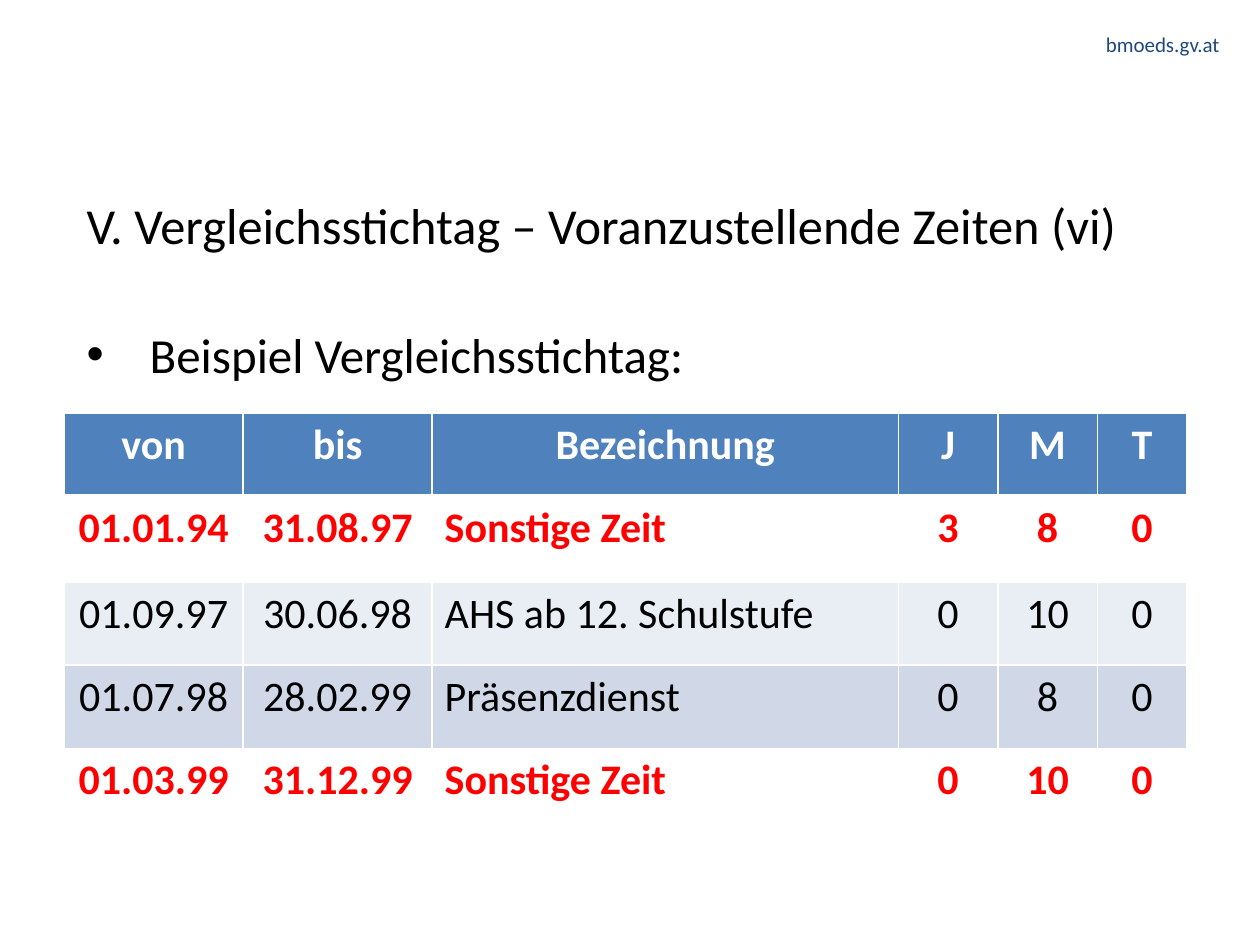
"""Build the slide with the example table for the reference date."""
from dataclasses import dataclass
from typing import Optional

from lxml import etree
from pptx import Presentation
from pptx import util as u
from pptx.dml.color import RGBColor
from pptx.enum import text as t
from pptx.oxml.ns import qn


@dataclass(frozen=True)
class Theme:
    font: str = "Calibri"
    black: str = "000000"
    white: str = "FFFFFF"
    red: str = "FF0000"
    navy: str = "1F497D"
    blue: str = "4F81BD"
    pale: str = "E9EDF4"
    mist: str = "D0D8E8"
    site: float = 12
    title: float = 28.8
    body: float = 28
    cell: float = 24
    lead: float = 42


@dataclass(frozen=True)
class Label:
    words: str
    box: tuple[float, float, float, float]
    size: float
    color: str
    align: t.PP_ALIGN = t.PP_ALIGN.LEFT
    inset: Optional[float] = None
    lead: Optional[float] = None
    hang: float = 0
    mark: str = ""


@dataclass(frozen=True)
class Row:
    cells: tuple[str, ...]
    high: float
    color: str
    bold: bool
    fill: Optional[str] = None
    base: float = 1


LOOK = Theme()
LEFT, CENTER = t.PP_ALIGN.LEFT, t.PP_ALIGN.CENTER
LABELS = (
    Label("bmoeds.gv.at", (7.27, 0.25, 2.41, 0.2), LOOK.site, LOOK.navy,
          align=t.PP_ALIGN.RIGHT, inset=0),
    Label("V. Vergleichsstichtag – Voranzustellende Zeiten (vi)",
          (0.59, 1.39, 8.73, 1.15), LOOK.title, LOOK.black,
          lead=LOOK.lead, hang=0.56),
    Label("Beispiel Vergleichsstichtag:", (0.59, 2.41, 9.13, 4.65),
          LOOK.body, LOOK.black, lead=LOOK.lead, hang=0.5, mark="•"),
)
SPOT = (0.51, 3.28)
COLS = (1.42, 1.5, 3.7, 0.79, 0.79, 0.71)
NAME = 2
ROWS = (
    Row(("von", "bis", "Bezeichnung", "J", "M", "T"),
        0.66, LOOK.white, True, LOOK.blue, base=3),
    Row(("01.01.94", "31.08.97", "Sonstige Zeit", "3", "8", "0"),
        0.68, LOOK.red, True),
    Row(("01.09.97", "30.06.98", "AHS ab 12. Schulstufe", "0", "10", "0"),
        0.66, LOOK.black, False, LOOK.pale),
    Row(("01.07.98", "28.02.99", "Präsenzdienst", "0", "8", "0"),
        0.66, LOOK.black, False, LOOK.mist),
    Row(("01.03.99", "31.12.99", "Sonstige Zeit", "0", "10", "0"),
        0.66, LOOK.red, True),
)


def write(para, words: str, size: float, color: str, bold: bool = False) -> None:
    run = para.add_run()
    run.text = words
    run.font.name = LOOK.font
    run.font.size = u.Pt(size)
    run.font.bold = bold
    run.font.color.rgb = RGBColor.from_string(color)


def indent(para, hang: float, mark: str) -> None:
    props = para._p.get_or_add_pPr()
    props.set("marL", str(u.Inches(hang)))
    props.set("indent", str(u.Inches(-hang)))
    if mark:
        etree.SubElement(props, qn("a:buFont"), typeface="Arial")
        etree.SubElement(props, qn("a:buChar"), char=mark)


def label(slide, item: Label) -> None:
    frame = slide.shapes.add_textbox(*map(u.Inches, item.box)).text_frame
    frame.word_wrap = True
    if item.inset is not None:
        pad = u.Inches(item.inset)
        frame.margin_left = frame.margin_right = pad
        frame.margin_top = frame.margin_bottom = pad
    para = frame.paragraphs[0]
    if item.hang:
        indent(para, item.hang, item.mark)
    para.alignment = item.align
    if item.lead:
        para.line_spacing = u.Pt(item.lead)
    write(para, item.words, item.size, item.color)


def border(cell, base: float) -> None:
    props = cell._tc.get_or_add_tcPr()
    for side, width in (("L", 1), ("R", 1), ("T", 1), ("B", base)):
        line = etree.SubElement(props, qn(f"a:ln{side}"), w=str(u.Pt(width)))
        fill = etree.SubElement(line, qn("a:solidFill"))
        etree.SubElement(fill, qn("a:srgbClr"), val=LOOK.white)


def paint(cell, color: Optional[str]) -> None:
    if color:
        cell.fill.solid()
        cell.fill.fore_color.rgb = RGBColor.from_string(color)
    else:
        cell.fill.background()


def table(slide, rows: tuple[Row, ...]) -> None:
    size = (sum(COLS), sum(row.high for row in rows))
    grid = slide.shapes.add_table(
        len(rows), len(COLS), *map(u.Inches, SPOT + size)).table
    grid.first_row = grid.horz_banding = False
    for col, wide in zip(grid.columns, COLS):
        col.width = u.Inches(wide)
    for r, row in enumerate(rows):
        grid.rows[r].height = u.Inches(row.high)
        for c, words in enumerate(row.cells):
            cell = grid.cell(r, c)
            border(cell, row.base)
            paint(cell, row.fill)
            para = cell.text_frame.paragraphs[0]
            para.alignment = LEFT if r and c == NAME else CENTER
            write(para, words, LOOK.cell, row.color, row.bold)


def main() -> None:
    deck = Presentation()
    deck.slide_width, deck.slide_height = u.Inches(10), u.Inches(7.5)
    slide = deck.slides.add_slide(deck.slide_layouts[6])
    for item in LABELS:
        label(slide, item)
    table(slide, ROWS)
    deck.save("out.pptx")


if __name__ == "__main__":
    main()
